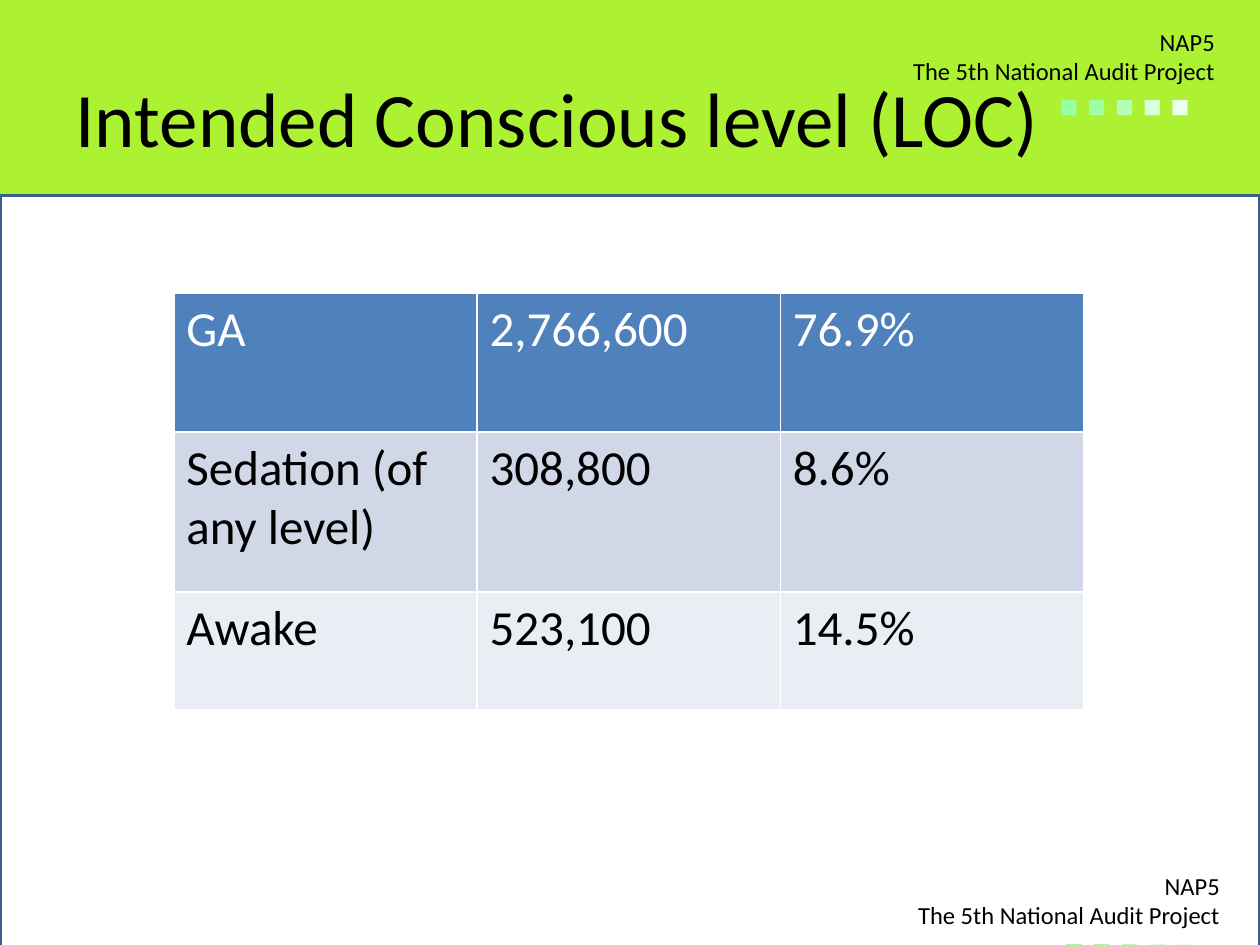
"""Build the slide on intended conscious level."""
from dataclasses import dataclass
from typing import Any

from pptx import Presentation
from pptx.dml.color import RGBColor
from pptx.enum import shapes, text
from pptx.util import Inches, Pt

LIME = RGBColor(0xAD, 0xF2, 0x32)
WHITE = RGBColor(0xFF, 0xFF, 0xFF)
BLACK = RGBColor(0, 0, 0)
EDGE = RGBColor(0x3A, 0x5F, 0x8C)
BLUE = RGBColor(0x4F, 0x81, 0xBD)
PALE = RGBColor(0xD0, 0xD8, 0xE8)
MIST = RGBColor(0xE9, 0xED, 0xF4)
GREENS = [RGBColor.from_string(c) for c in
          ("99FFA4", "A0FFA3", "B3FFB5", "DAFFDB", "EDFFED")]


@dataclass
class Badge:
    left: float
    top: float


@dataclass
class Row:
    cells: tuple[str, str, str]
    height: float
    fill: RGBColor
    ink: RGBColor


BADGES = [Badge(6.57, 0.2), Badge(6.61, 6.9)]
ROWS = [
    Row(("GA", "2,766,600", "76.9%"), 1.1, BLUE, WHITE),
    Row(("Sedation (of any level)", "308,800", "8.6%"), 1.27, PALE, BLACK),
    Row(("Awake", "523,100", "14.5%"), 0.93, MIST, BLACK),
]


def style(font: Any, size: float, ink: RGBColor, name: str = "Calibri") -> None:
    for key, val in {"size": Pt(size), "name": name, "bold": False}.items():
        setattr(font, key, val)
    font.color.rgb = ink


def draw_panel(slide: Any) -> None:
    panel = slide.shapes.add_shape(
        shapes.MSO_SHAPE.RECTANGLE, 0, Inches(1.55), Inches(10), Inches(6.38))
    panel.shadow.inherit = False
    panel.fill.solid()
    panel.fill.fore_color.rgb = WHITE
    panel.line.color.rgb = EDGE
    panel.line.width = Pt(2)


def draw_badge(slide: Any, badge: Badge) -> None:
    box = slide.shapes.add_textbox(
        Inches(badge.left), Inches(badge.top), Inches(3.17), Inches(0.79))
    frame = box.text_frame
    frame.word_wrap = True
    frame.vertical_anchor = text.MSO_ANCHOR.MIDDLE
    frame.text = "NAP5\nThe 5th National Audit Project"
    for para in frame.paragraphs:
        para.alignment = text.PP_ALIGN.RIGHT
        style(para.runs[0].font, 14, BLACK)
    dots = frame.add_paragraph()
    dots._p.get_or_add_pPr().set("marL", str(Inches(1.74)))
    for i, green in enumerate(GREENS):
        run = dots.add_run()
        run.text = "■ " if i < len(GREENS) - 1 else "■"
        style(run.font, 18, green, "Arial")


def draw_table(slide: Any) -> None:
    table = slide.shapes.add_table(
        len(ROWS), 3, Inches(1.38), Inches(2.33), Inches(7.22), Inches(3.3)).table
    for line, row in zip(table.rows, ROWS):
        line.height = Inches(row.height)
        for cell, word in zip(line.cells, row.cells):
            cell.text = word
            cell.fill.solid()
            cell.fill.fore_color.rgb = row.fill
            style(cell.text_frame.paragraphs[0].runs[0].font, 28, row.ink)


def draw_title(slide: Any) -> None:
    title = slide.shapes.title
    spot = {"left": 0.5, "top": 0.3, "width": 9, "height": 1.25}
    for key, val in spot.items():
        setattr(title, key, Inches(val))
    frame = title.text_frame
    frame.text = "Intended Conscious level (LOC)"
    frame.vertical_anchor = text.MSO_ANCHOR.MIDDLE
    para = frame.paragraphs[0]
    para.alignment = text.PP_ALIGN.LEFT
    style(para.runs[0].font, 44, BLACK)


def main() -> None:
    deck = Presentation()
    deck.slide_width, deck.slide_height = Inches(10), Inches(7.5)
    slide = deck.slides.add_slide(deck.slide_layouts[5])
    slide.background.fill.solid()
    slide.background.fill.fore_color.rgb = LIME
    draw_panel(slide)
    for badge in BADGES:
        draw_badge(slide, badge)
    draw_title(slide)
    draw_table(slide)
    deck.save("out.pptx")


if __name__ == "__main__":
    main()
